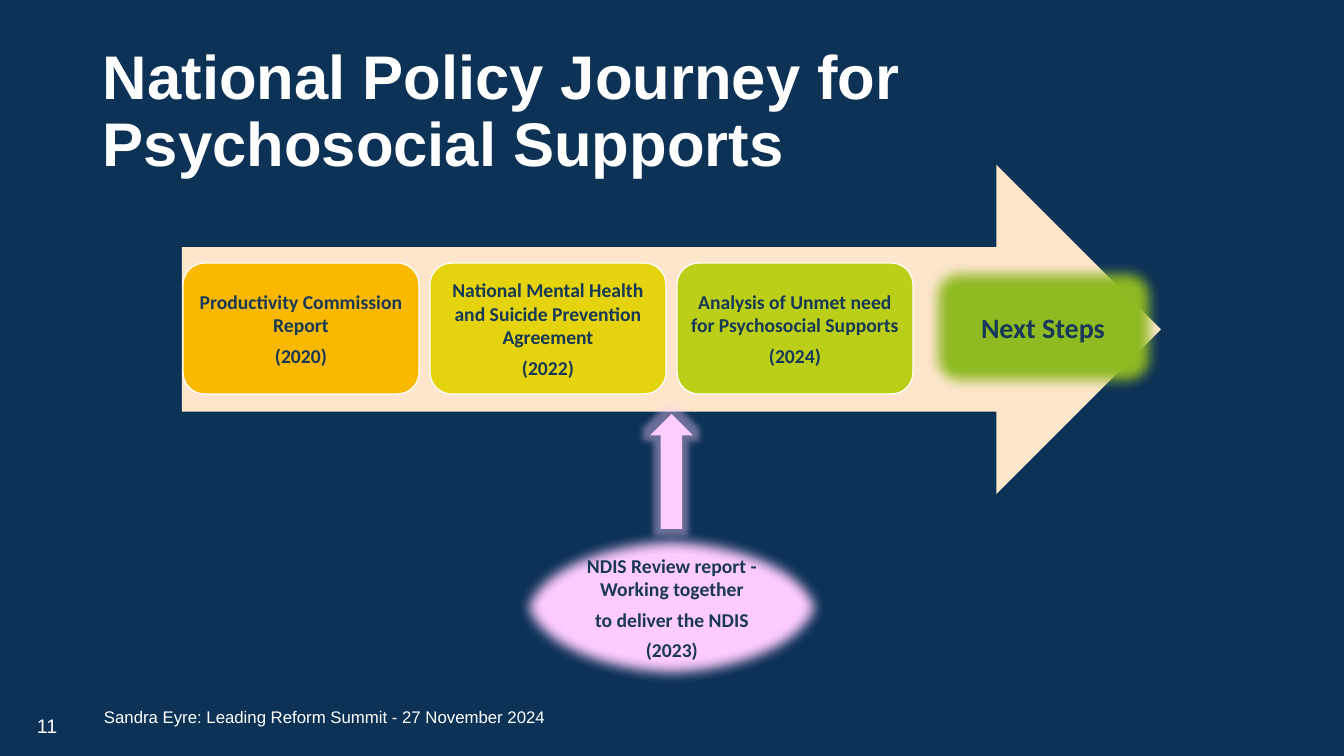
from lxml import etree
from pptx import Presentation
from pptx.dml.color import RGBColor
from pptx.enum.shapes import MSO_SHAPE
from pptx.enum.text import MSO_ANCHOR, PP_ALIGN
from pptx.oxml.ns import qn
from pptx.util import Pt

PX = 914400 / 100.8
TOP, MIDDLE = MSO_ANCHOR.TOP, MSO_ANCHOR.MIDDLE
CENTER, LEFT = PP_ALIGN.CENTER, PP_ALIGN.LEFT
ROUNDED, ELLIPSE = MSO_SHAPE.ROUNDED_RECTANGLE, MSO_SHAPE.OVAL
RIGHT_ARROW, UP_ARROW = MSO_SHAPE.RIGHT_ARROW, MSO_SHAPE.UP_ARROW
COLORS = {
    "navy": "0C3256", "white": "FFFFFF", "ink": "183857", "cream": "FDE6CC",
    "orange": "FAB900", "yellow": "E4D30D", "lime": "BCCF18",
    "green": "90BB23", "pink": "FFCCFF",
}


def add_item(kind, box, fill=None, line=None):
    """Add a preset shape, or a text box when kind is None; box is in px."""
    box = [round(v * PX) for v in box]
    if kind is None:
        return slide.shapes.add_textbox(*box)
    sp = slide.shapes.add_shape(kind, *box)
    sp.shadow.inherit = False
    sp.fill.solid()
    sp.fill.fore_color.rgb = RGBColor.from_string(COLORS[fill])
    if line:
        sp.line.color.rgb = RGBColor.from_string(COLORS[line])
        sp.line.width = Pt(0.85)
    else:
        sp.line.fill.background()
    return sp


def write(sp, lines, size, font, color, bold=False, align=LEFT, anchor=MIDDLE, inset=None):
    tf = sp.text_frame
    tf.word_wrap = True
    tf.vertical_anchor = anchor
    if inset is not None:
        tf.margin_left = tf.margin_right = round(inset * PX)
        tf.margin_top = tf.margin_bottom = round(inset * PX)
    for i, line in enumerate(lines):
        p = tf.add_paragraph() if i else tf.paragraphs[0]
        p.alignment = align
        if len(lines) > 1:
            p.space_after = Pt(4.9)
        r = p.add_run()
        r.text = line
        r.font.size, r.font.name, r.font.bold = Pt(size), font, bold
        r.font.color.rgb = RGBColor.from_string(COLORS[color])


prs = Presentation()
prs.slide_width, prs.slide_height = round(1344 * PX), round(756 * PX)
slide = prs.slides.add_slide(prs.slide_layouts[6])
slide.background.fill.solid()
slide.background.fill.fore_color.rgb = RGBColor.from_string(COLORS["navy"])

# Title and footer
title = add_item(None, (93, 40, 1159, 146))
write(title, ["National Policy Journey for Psychosocial Supports"], 44, "Arial", "white", bold=True)
title.text_frame.paragraphs[0].line_spacing = 0.9

footer = add_item(None, (94, 706, 652, 40))
write(footer, ["Sandra Eyre: Leading Reform Summit - 27 November 2024"], 12, "Arial", "white", anchor=TOP)
footer.text_frame.margin_top = round(1 * PX)
write(add_item(None, (27, 706, 103, 40)), ["11"], 14, "Arial", "white")

# Timeline arrow with its steps
add_item(RIGHT_ARROW, (182, 165, 979, 329), "cream")
steps = [
    ("orange", ["Productivity Commission Report", "(2020)"]),
    ("yellow", ["National Mental Health and Suicide Prevention Agreement", "(2022)"]),
    ("lime", ["Analysis of Unmet need for Psychosocial Supports", "(2024)"]),
]
STEP_LEFT, STEP_PITCH, STEP_WIDTH, STEP_HEIGHT = 183, 247, 236, 131
for i, (fill, lines) in enumerate(steps):
    step = add_item(ROUNDED, (STEP_LEFT + i * STEP_PITCH, 263, STEP_WIDTH, STEP_HEIGHT), fill, "white")
    write(step, lines, 14, "Calibri", "ink", bold=True, align=CENTER, inset=6)

next_steps = add_item(ROUNDED, (925, 262, STEP_WIDTH, STEP_HEIGHT), "green")
write(next_steps, ["Next Steps"], 20, "Calibri", "ink", bold=True, align=CENTER, inset=8)

# Review report feeding into the timeline
review = add_item(ELLIPSE, (515, 530, 314, 155), "pink")
write(review, ["NDIS Review report - Working together", "to deliver the NDIS", "(2023)"],
      14, "Calibri", "ink", bold=True, align=CENTER)
review_arrow = add_item(UP_ARROW, (650, 414, 43, 115), "pink")

# Blurred edges and glow
for sp, effect in ((next_steps, "softEdge"), (review, "softEdge"), (review_arrow, "glow")):
    effects = sp.element.spPr.find(qn("a:effectLst"))
    node = etree.SubElement(effects, qn(f"a:{effect}"), rad=str(round(13 * PX)))
    if effect == "glow":
        color = etree.SubElement(node, qn("a:srgbClr"), val=COLORS["pink"])
        etree.SubElement(color, qn("a:alpha"), val="40000")

prs.save("out.pptx")
